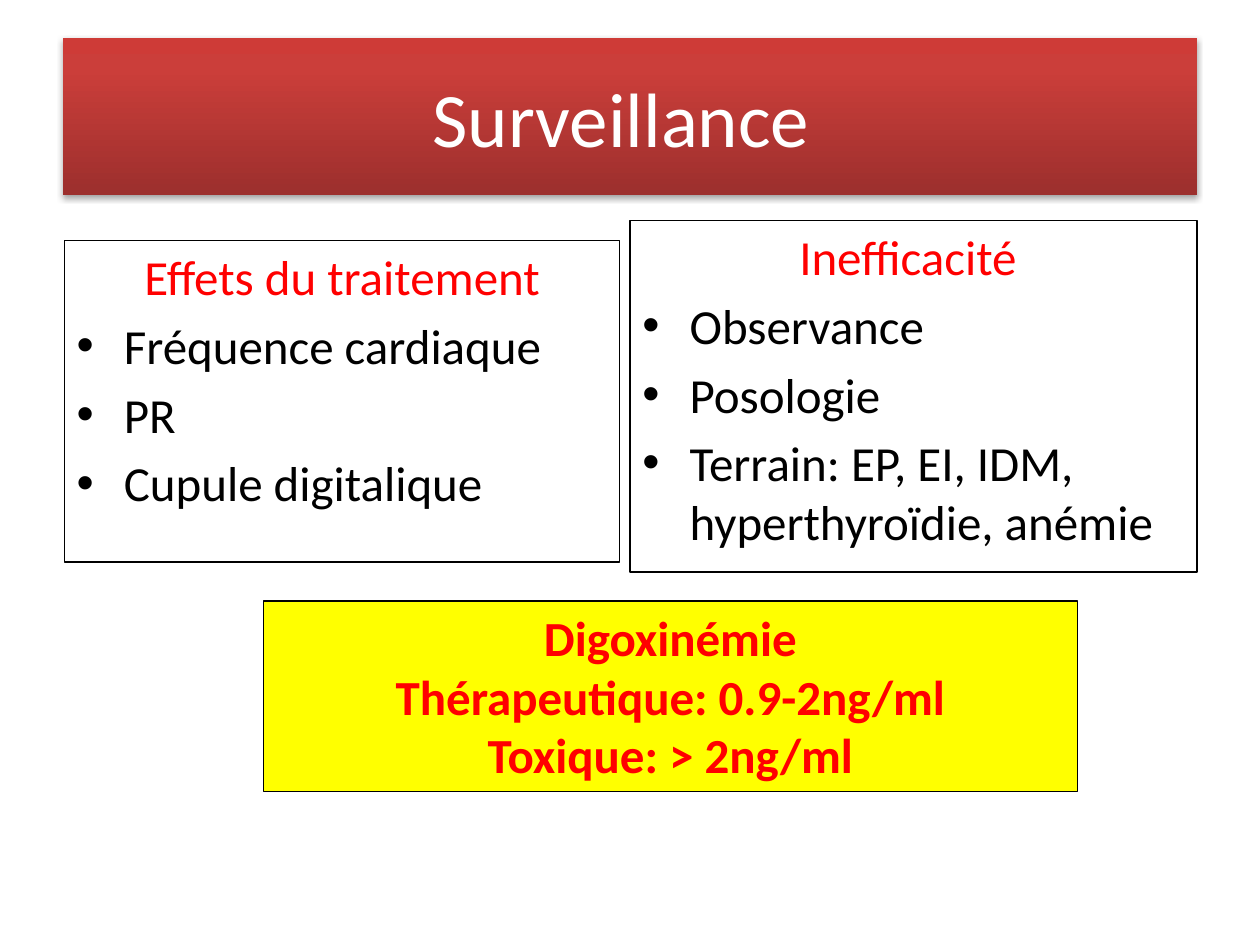
"""Builds the slide on monitoring digoxin treatment."""
from pptx import Presentation
from pptx.dml.color import RGBColor
from pptx.enum.shapes import MSO_SHAPE as Shape
from pptx.enum.text import MSO_ANCHOR as Anchor, PP_ALIGN as Align
from pptx.oxml import parse_xml
from pptx.oxml.ns import nsdecls
from pptx.util import Pt

FONT = "Calibri"
RED, BLACK, WHITE, YELLOW = "FF0000", "000000", "FFFFFF", "FFFF00"
INDENT = 27
TITLE = ("Surveillance ", (36, 21.6, 648, 90))
TITLE_STOPS = [(0, "9C2F2D"), (80, "CB3E3A"), (100, "CE3B37")]
PANELS = [
    ("Effets du traitement",
     ["Fréquence cardiaque", "PR", "Cupule digitalique"],
     (36.72, 137.52, 317.52, 183.6)),
    ("Inefficacité ",
     ["Observance", "Posologie", "Terrain: EP, EI, IDM, hyperthyroïdie, anémie"],
     (360, 126, 324, 200.88)),
]
LEVELS = (["Digoxinémie", "Thérapeutique: 0.9-2ng/ml", "Toxique: > 2ng/ml"],
          (150.48, 343.44, 465.12, 108.72))


def color(value):
    return RGBColor.from_string(value)


def add_box(page, place, fill=None, line=None, anchor=Anchor.TOP):
    box = page.shapes.add_shape(Shape.RECTANGLE, *map(Pt, place))
    box.shadow.inherit = False
    if fill:
        box.fill.solid()
        box.fill.fore_color.rgb = color(fill)
    else:
        box.fill.background()
    if line:
        box.line.color.rgb = color(line)
        box.line.width = Pt(0.75)
    else:
        box.line.fill.background()
    box.text_frame.word_wrap = True
    box.text_frame.vertical_anchor = anchor
    return box


def write(box, lines, ink, size=28, bold=False):
    box.text_frame.text = "\n".join(lines)
    for para in box.text_frame.paragraphs:
        para.alignment = Align.CENTER
        for span in para.runs:
            span.font.name = FONT
            span.font.size = Pt(size)
            span.font.bold = bold
            span.font.color.rgb = color(ink)


def style_list(box):
    for index, para in enumerate(box.text_frame.paragraphs):
        para.space_before = Pt(5.6)
        props = para._p.get_or_add_pPr()
        props.set("marL", str(Pt(INDENT)))
        props.set("indent", str(Pt(-INDENT)))
        if index == 0:
            props.append(parse_xml(f"<a:buNone {nsdecls('a')}/>"))
            continue
        para.alignment = Align.LEFT
        para.runs[0].font.color.rgb = color(BLACK)
        props.append(parse_xml(f'<a:buFont {nsdecls("a")} typeface="Arial"/>'))
        props.append(parse_xml(f'<a:buChar {nsdecls("a")} char="•"/>'))


def shade_title(box):
    stops = "".join(
        f'<a:gs pos="{position * 1000}"><a:srgbClr val="{value}"/></a:gs>'
        for position, value in TITLE_STOPS)
    gradient = parse_xml(
        f'<a:gradFill {nsdecls("a")} rotWithShape="1"><a:gsLst>{stops}</a:gsLst>'
        '<a:lin ang="16200000" scaled="0"/></a:gradFill>')
    shadow = parse_xml(
        f'<a:outerShdw {nsdecls("a")} blurRad="{Pt(3.1)}" dist="{Pt(1.8)}" '
        'dir="5400000" rotWithShape="0"><a:srgbClr val="000000">'
        '<a:alpha val="35000"/></a:srgbClr></a:outerShdw>')
    props = box._element.spPr
    solid = props.find(".//{*}solidFill")
    props.replace(solid, gradient)
    props.find("{*}effectLst").append(shadow)


def main():
    deck = Presentation()
    deck.slide_width, deck.slide_height = Pt(720), Pt(540)
    page = deck.slides.add_slide(deck.slide_layouts[6])

    for heading, items, place in PANELS:
        panel = add_box(page, place, line=BLACK)
        write(panel, [heading, *items], RED)
        style_list(panel)

    text, place = TITLE
    title = add_box(page, place, fill=RED, anchor=Anchor.MIDDLE)
    write(title, [text], WHITE, size=44)
    shade_title(title)

    lines, place = LEVELS
    levels = add_box(page, place, fill=YELLOW, line=BLACK)
    write(levels, lines, RED, bold=True)

    deck.save("out.pptx")


if __name__ == "__main__":
    main()
